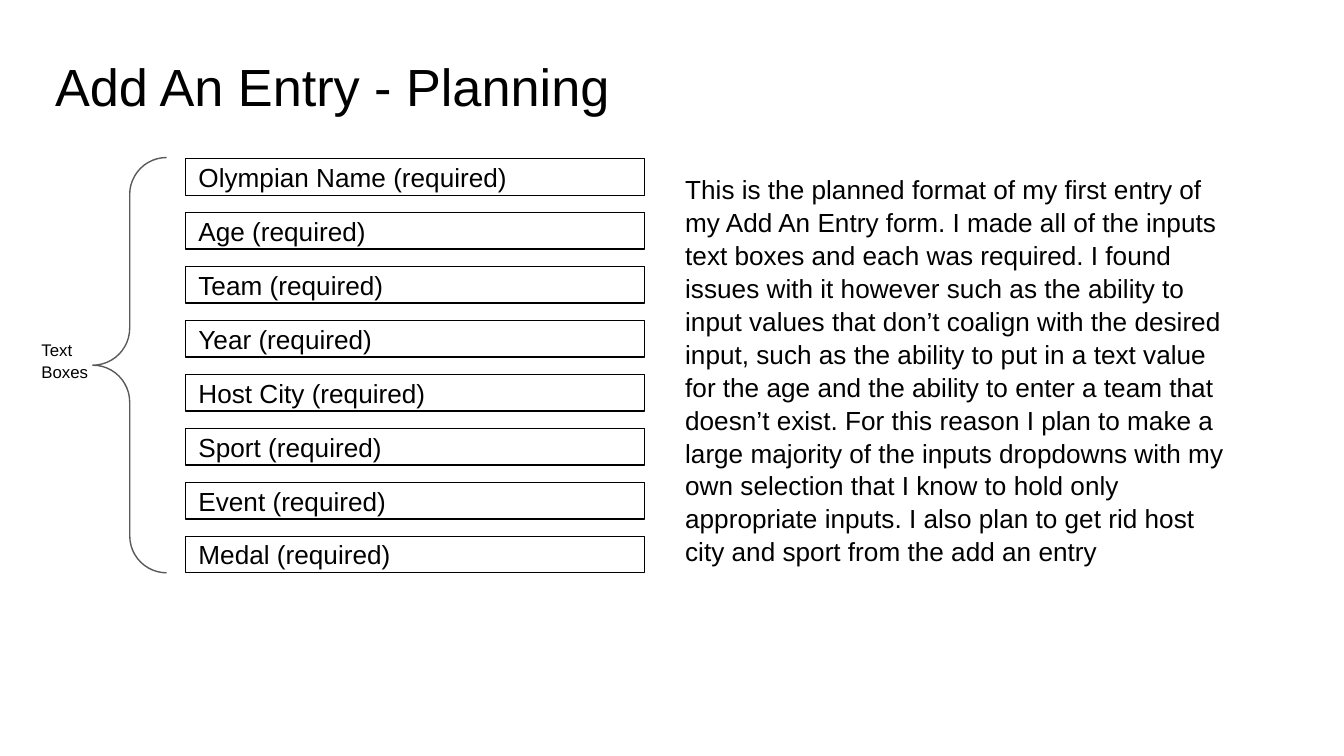
import pptx
import pptx.dml.color
import pptx.enum.shapes
import pptx.enum.text
import pptx.util

Pt = pptx.util.Pt
BLACK = pptx.dml.color.RGBColor(0x00, 0x00, 0x00)
WHITE = pptx.dml.color.RGBColor(0xFF, 0xFF, 0xFF)
GREY = pptx.dml.color.RGBColor(0x59, 0x59, 0x59)
FONT = "Arial"
INSET = 7.2

FIELDS = ["Olympian Name", "Age", "Team", "Year", "Host City", "Sport", "Event", "Medal"]
FIELD_TOP = 85
FIELD_STEP = 28.9
EXPLANATION = (
    "This is the planned format of my first entry of my Add An Entry form. "
    "I made all of the inputs text boxes and each was required. "
    "I found issues with it however such as the ability to input values that "
    "don’t coalign with the desired input, such as the ability to put in a text "
    "value for the age and the ability to enter a team that doesn’t exist. "
    "For this reason I plan to make a large majority of the inputs dropdowns with "
    "my own selection that I know to hold only appropriate inputs. "
    "I also plan to get rid host city and sport from the add an entry"
)


def write(sp, text, size, spacing=1.0, anchor=pptx.enum.text.MSO_ANCHOR.TOP):
    tf = sp.text_frame
    tf.text = text
    tf.word_wrap = True
    tf.auto_size = pptx.enum.text.MSO_AUTO_SIZE.NONE
    tf.vertical_anchor = anchor
    tf.margin_left = tf.margin_right = tf.margin_top = tf.margin_bottom = Pt(INSET)
    p = tf.paragraphs[0]
    p.alignment = pptx.enum.text.PP_ALIGN.LEFT
    p.line_spacing = spacing
    font = p.runs[0].font
    font.name = FONT
    font.size = Pt(size)
    font.color.rgb = BLACK


def set_title(s, text, left, top, width, height):
    sp = s.shapes.title
    sp.left, sp.top, sp.width, sp.height = Pt(left), Pt(top), Pt(width), Pt(height)
    write(sp, text, 28, spacing=1.1)


def add_text(s, text, left, top, width, height, size, spacing):
    sp = s.shapes.add_textbox(Pt(left), Pt(top), Pt(width), Pt(height))
    write(sp, text, size, spacing)


def add_outlined(s, kind, left, top, width, height, color):
    sp = s.shapes.add_shape(kind, Pt(left), Pt(top), Pt(width), Pt(height))
    sp.shadow.inherit = False
    sp.line.color.rgb = color
    sp.line.width = Pt(0.75)
    return sp


def add_field(s, label, top):
    sp = add_outlined(s, pptx.enum.shapes.MSO_SHAPE.RECTANGLE, 99.2, top, 246.2, 19.6, BLACK)
    sp.fill.solid()
    sp.fill.fore_color.rgb = WHITE
    write(sp, label, 14, anchor=pptx.enum.text.MSO_ANCHOR.MIDDLE)


def add_brace(s, left, top, width, height):
    sp = add_outlined(s, pptx.enum.shapes.MSO_SHAPE.LEFT_BRACE, left, top, width, height, GREY)
    sp.fill.background()
    sp.adjustments[0] = 0.5
    sp.adjustments[1] = 0.5


def main():
    prs = pptx.Presentation()
    prs.slide_width, prs.slide_height = Pt(720), Pt(405)
    s = prs.slides.add_slide(prs.slide_layouts[5])

    set_title(s, "Add An Entry - Planning", 22.3, 18.7, 350, 45.4)
    for i, field in enumerate(FIELDS):
        add_field(s, f"{field} (required)", FIELD_TOP + i * FIELD_STEP)
    add_text(s, EXPLANATION, 360, 85, 311.8, 290.9, size=14, spacing=1.05)
    add_brace(s, 49.7, 84.4, 39.6, 222.5)
    add_text(s, "Text Boxes", 15.1, 174.2, 46.8, 19.4, size=9, spacing=1.08)

    prs.save("out.pptx")


if __name__ == "__main__":
    main()
